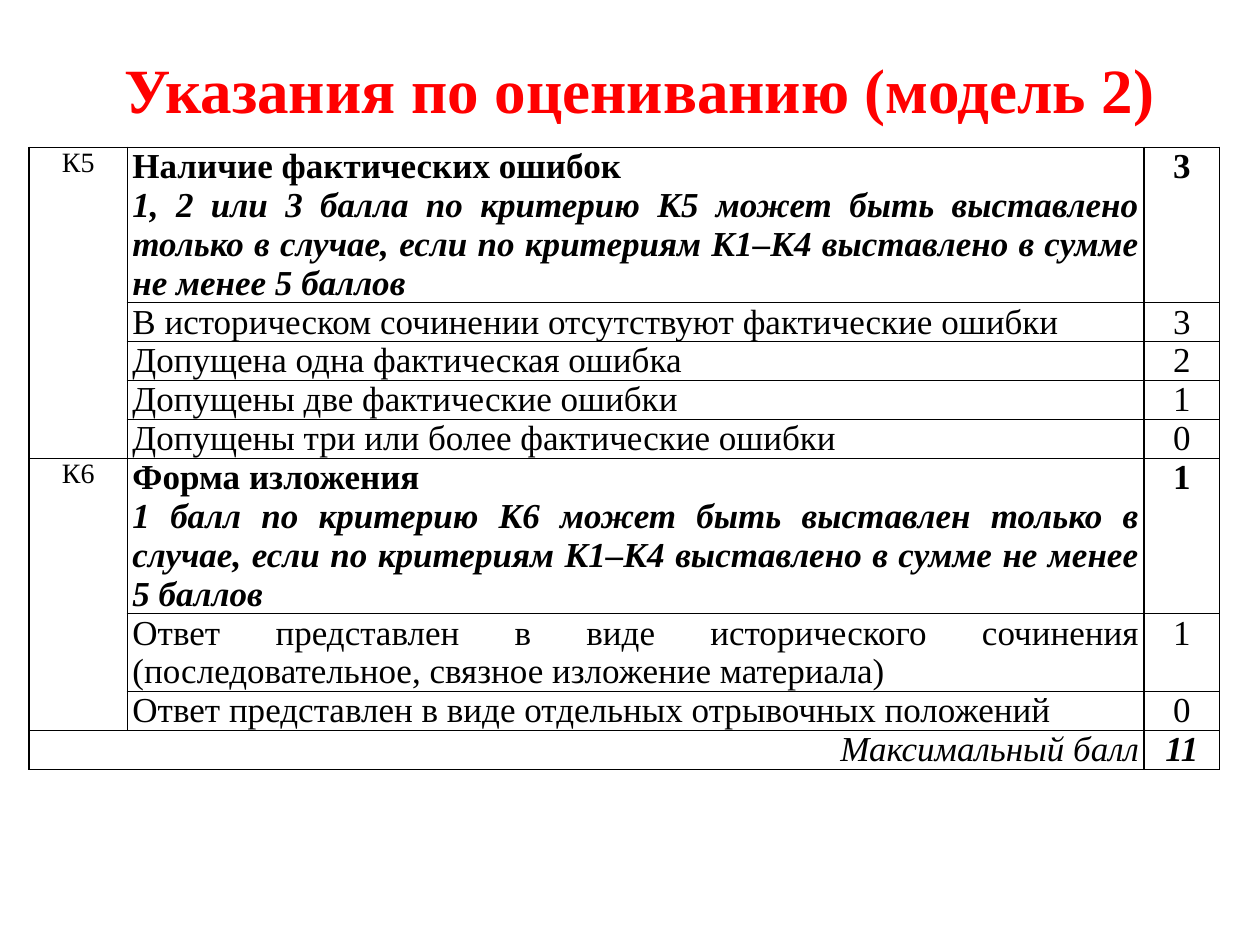
from dataclasses import dataclass

from lxml import etree
from pptx import Presentation, util as u
from pptx.dml.color import RGBColor
from pptx.enum import text
from pptx.oxml import ns

FONT = "Times New Roman"
BLACK, RED = "000000", "FF0000"
CENTER, RIGHT = text.PP_ALIGN.CENTER, text.PP_ALIGN.RIGHT
JUSTIFY = text.PP_ALIGN.JUSTIFY
LINE_HEIGHT = 22.2
COLUMN_WIDTHS = (56.2, 581, 43.2)


@dataclass
class Level:
    wording: str
    points: str
    lines: int = 1


@dataclass
class Criterion:
    code: str
    name: str
    condition: str
    points: str
    levels: list[Level]
    lines: int = 4


CRITERIA = [
    Criterion(
        "К5", "Наличие фактических ошибок",
        "1, 2 или 3 балла по критерию К5 может быть выставлено только в случае, "
        "если по критериям К1–К4 выставлено в сумме не менее 5 баллов",
        "3",
        [Level("В историческом сочинении отсутствуют фактические ошибки", "3"),
         Level("Допущена одна фактическая ошибка", "2"),
         Level("Допущены две фактические ошибки", "1"),
         Level("Допущены три или более фактические ошибки", "0")]),
    Criterion(
        "К6", "Форма изложения",
        "1 балл по критерию К6 может быть выставлен только в случае, "
        "если по критериям К1–К4 выставлено в сумме не менее 5 баллов",
        "1",
        [Level("Ответ представлен в виде исторического сочинения "
               "(последовательное, связное изложение материала)", "1", 2),
         Level("Ответ представлен в виде отдельных отрывочных положений", "0")]),
]


def color(value: str) -> RGBColor:
    return RGBColor.from_string(value)


def write(para, wording: str, *, size: float = 20, bold: bool = False,
          italic: bool = False, align=JUSTIFY, ink: str = BLACK) -> None:
    para.alignment = align
    span = para.add_run()
    span.text = wording
    span.font.name, span.font.size = FONT, u.Pt(size)
    span.font.bold, span.font.italic = bold, italic
    span.font.color.rgb = color(ink)


def format_cell(cell) -> None:
    """Give a cell thin margins, black borders and no fill."""
    cell.margin_left = cell.margin_right = u.Pt(2.9)
    cell.margin_top = cell.margin_bottom = 0
    properties = cell._tc.get_or_add_tcPr()
    for side in ("lnL", "lnR", "lnT", "lnB"):
        line = etree.SubElement(properties, ns.qn(f"a:{side}"), w=str(u.Pt(1)))
        fill = etree.SubElement(line, ns.qn("a:solidFill"))
        etree.SubElement(fill, ns.qn("a:srgbClr"), val=BLACK)
    cell.fill.background()


def add_title(page) -> None:
    box = page.shapes.add_textbox(u.Pt(36), u.Pt(21.6), u.Pt(658.8), u.Pt(57.6))
    frame = box.text_frame
    frame.word_wrap = True
    frame.vertical_anchor = text.MSO_ANCHOR.MIDDLE
    write(frame.paragraphs[0], "Указания по оцениванию (модель 2)",
          size=36, bold=True, align=CENTER, ink=RED)


def add_grid(page, row_lines: list[int]):
    """Add an empty table whose row heights follow the lines of text."""
    frame = page.shapes.add_table(
        len(row_lines), len(COLUMN_WIDTHS), u.Pt(16.6), u.Pt(84.2),
        u.Pt(sum(COLUMN_WIDTHS)), u.Pt(sum(row_lines) * LINE_HEIGHT))
    table = frame.table
    table.first_row = table.horz_banding = False
    for column, width in zip(table.columns, COLUMN_WIDTHS):
        column.width = u.Pt(width)
    for row, lines in zip(table.rows, row_lines):
        row.height = u.Pt(lines * LINE_HEIGHT)
    for cell in table.iter_cells():
        format_cell(cell)
    return table


def fill_criterion(table, top: int, criterion: Criterion) -> int:
    """Write one criterion and return the row below it."""
    def first_para(row: int, column: int):
        return table.cell(row, column).text_frame.paragraphs[0]

    bottom = top + len(criterion.levels)
    table.cell(top, 0).merge(table.cell(bottom, 0))
    write(first_para(top, 0), criterion.code, size=16, align=CENTER)
    write(first_para(top, 1), criterion.name, bold=True)
    write(table.cell(top, 1).text_frame.add_paragraph(), criterion.condition,
          bold=True, italic=True)
    write(first_para(top, 2), criterion.points, bold=True, align=CENTER)
    for row, level in enumerate(criterion.levels, top + 1):
        write(first_para(row, 1), level.wording)
        write(first_para(row, 2), level.points, align=CENTER)
    return bottom + 1


def add_criteria(page) -> None:
    row_lines = [part.lines for criterion in CRITERIA
                 for part in (criterion, *criterion.levels)]
    table = add_grid(page, row_lines + [1])
    row = 0
    for criterion in CRITERIA:
        row = fill_criterion(table, row, criterion)

    # Total
    table.cell(row, 0).merge(table.cell(row, 1))
    write(table.cell(row, 0).text_frame.paragraphs[0], "Максимальный балл",
          italic=True, align=RIGHT)
    write(table.cell(row, 2).text_frame.paragraphs[0], "11",
          bold=True, italic=True, align=CENTER)


def main() -> None:
    deck = Presentation()
    deck.slide_width, deck.slide_height = u.Pt(720), u.Pt(540)
    page = deck.slides.add_slide(deck.slide_layouts[6])
    add_criteria(page)
    add_title(page)
    deck.save("out.pptx")


if __name__ == "__main__":
    main()
